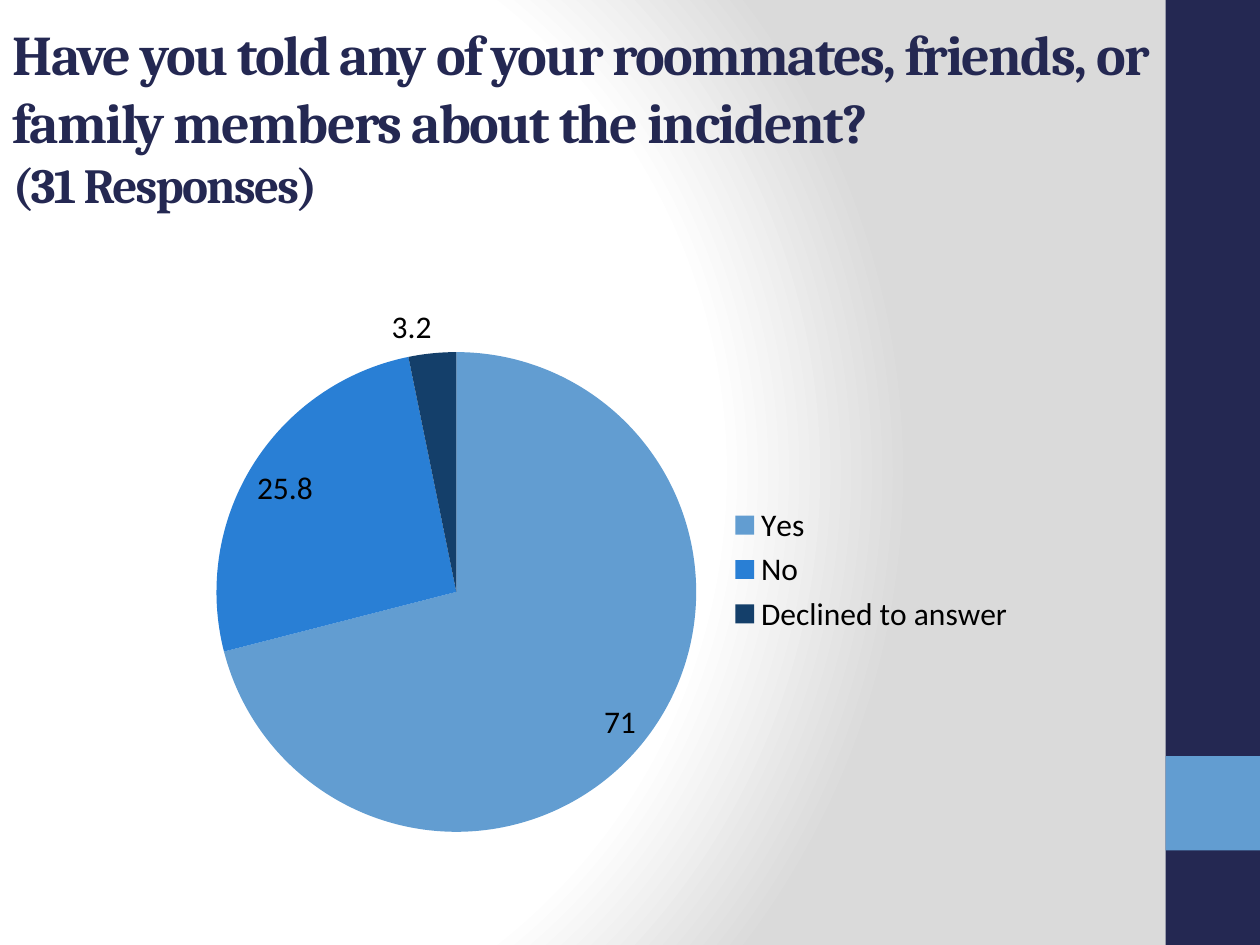
from lxml.etree import SubElement
from pptx import Presentation
from pptx.chart.data import CategoryChartData
from pptx.dml.color import RGBColor
from pptx.enum.chart import XL_CHART_TYPE, XL_LABEL_POSITION, XL_LEGEND_POSITION
from pptx.enum.shapes import MSO_SHAPE
from pptx.enum.text import MSO_ANCHOR, MSO_AUTO_SIZE, PP_ALIGN
from pptx.oxml.ns import qn
from pptx.util import Pt

# Content
QUESTION = "Have you told any of your roommates, friends, or family members about the incident? "
RESPONSES = "(31 Responses)"
ANSWERS = [
    ("Yes", 71, "629DD1"),
    ("No", 25.8, "297FD5"),
    ("Declined to answer", 3.2, "143F6A"),
]
NAVY, BLUE = "242852", "629DD1"
GRADIENT = [(0, "FFFFFF"), (75, "FFFFFF"), (100, "DADADA")]
GRADIENT_CENTRE = {"l": 20, "t": 50, "r": 100, "b": 50}

# Layout in points
WIDTH, HEIGHT = 720, 540
BAR = 54
SIDE_BARS = [(0, HEIGHT, NAVY), (432, BAR, BLUE)]
TITLE_BOX = (0, 21.6, 668, 90)
CHART_BOX = (107.28, 165.6, 480.24, 319.68)


def rgb(color):
    return RGBColor.from_string(color)


def box(values):
    return [Pt(v) for v in values]


def paint_background(slide):
    fill = slide.background.fill
    fill.gradient()
    grad = slide.background._cSld.find(".//" + qn("a:gradFill"))
    for child in list(grad):
        grad.remove(child)
    stops = SubElement(grad, qn("a:gsLst"))
    for pos, color in GRADIENT:
        stop = SubElement(stops, qn("a:gs"), pos=str(pos * 1000))
        SubElement(stop, qn("a:srgbClr"), val=color)
    circle = SubElement(grad, qn("a:path"), {"path": "circle"})
    edges = {side: str(v * 1000) for side, v in GRADIENT_CENTRE.items()}
    SubElement(circle, qn("a:fillToRect"), edges)


def add_title_run(p, text, size):
    r = p.add_run()
    r.text = text
    r.font.name = "Cambria"
    r.font.size = Pt(size)
    r.font.bold = True
    r.font.color.rgb = rgb(NAVY)
    r.font._element.set("spc", "-100")


prs = Presentation()
prs.slide_width, prs.slide_height = Pt(WIDTH), Pt(HEIGHT)
s = prs.slides.add_slide(prs.slide_layouts[5])
paint_background(s)

# Side bars
for top, height, color in SIDE_BARS:
    sp = s.shapes.add_shape(MSO_SHAPE.RECTANGLE, *box((WIDTH - BAR, top, BAR, height)))
    sp.shadow.inherit = False
    sp.fill.solid()
    sp.fill.fore_color.rgb = rgb(color)
    sp.line.fill.background()

# Title
title = s.shapes.title
title.left, title.top, title.width, title.height = box(TITLE_BOX)
tf = title.text_frame
tf.word_wrap = True
tf.auto_size = MSO_AUTO_SIZE.NONE
tf.vertical_anchor = MSO_ANCHOR.MIDDLE
p = tf.paragraphs[0]
p.alignment = PP_ALIGN.LEFT
add_title_run(p, QUESTION, 32)
p.add_line_break()
add_title_run(p, RESPONSES, 28)

# Pie chart
data = CategoryChartData()
data.categories = [name for name, _, _ in ANSWERS]
data.add_series("Series 1", [value for _, value, _ in ANSWERS])
chart = s.shapes.add_chart(XL_CHART_TYPE.PIE, *box(CHART_BOX), data).chart
chart.has_title = False
chart.font.name = "Calibri"
chart.font.size = Pt(18)
chart.font.color.rgb = rgb("000000")
chart.has_legend = True
chart.legend.position = XL_LEGEND_POSITION.RIGHT
chart.legend.include_in_layout = False

plot = chart.plots[0]
plot.vary_by_categories = True
for i, (_, _, color) in enumerate(ANSWERS):
    point = plot.series[0].points[i]
    point.format.fill.solid()
    point.format.fill.fore_color.rgb = rgb(color)
    point.format.line.fill.background()
plot.has_data_labels = True
plot.data_labels.show_value = True
plot.data_labels.show_percentage = False
plot.data_labels.position = XL_LABEL_POSITION.BEST_FIT

prs.save("out.pptx")
